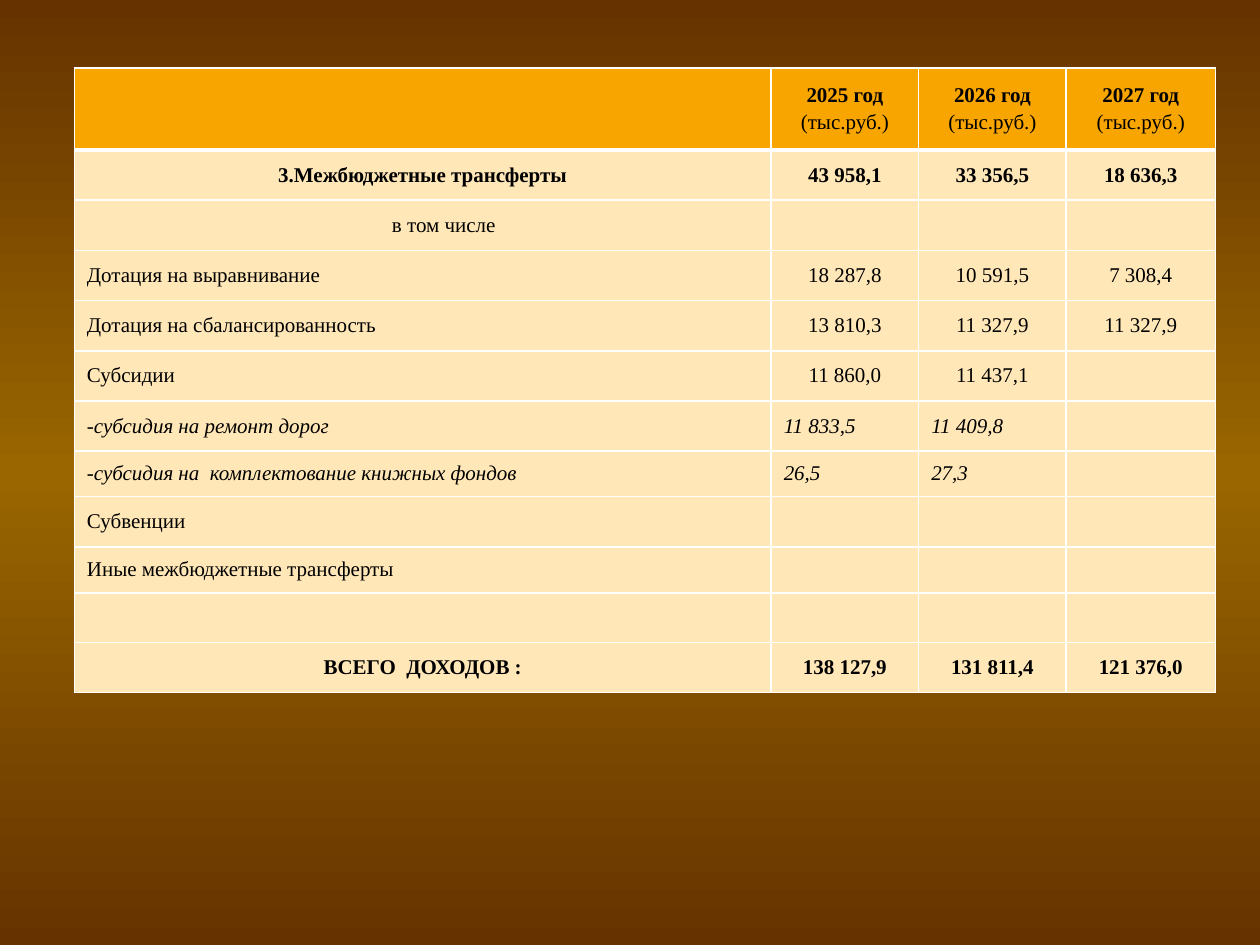
from copy import deepcopy

from lxml import etree
from pptx import Presentation, util as u
from pptx.dml.color import RGBColor
from pptx.enum import text
from pptx.oxml import ns

FONT, SIZE = "Times New Roman", 12
HEADER_FILL, BODY_FILL, WHITE, BLACK = "F8A500", "FFE7B8", "FFFFFF", "000000"
LEFT, CENTER, JUSTIFY = (text.PP_ALIGN.LEFT, text.PP_ALIGN.CENTER,
                         text.PP_ALIGN.JUSTIFY)
COLUMN_WIDTHS = [398.2, 84.3, 84.3, 85.3]
ROW_HEIGHTS = [46.8] + [28.7] * 6 + [26, 28.7, 26.3, 28.4, 28.7]
YEARS = ["2025 год", "2026 год", "2027 год"]
UNIT = "(тыс.руб.)"
BOLD, PLAIN, ITALIC = "bold", "plain", "italic"
INCOME_ROWS = [
    (BOLD, CENTER, "3.Межбюджетные трансферты", ["43 958,1", "33 356,5", "18 636,3"]),
    (PLAIN, CENTER, "в том числе", ["", "", ""]),
    (PLAIN, LEFT, "Дотация на выравнивание", ["18 287,8", "10 591,5", "7 308,4"]),
    (PLAIN, LEFT, "Дотация на сбалансированность", ["13 810,3", "11 327,9", "11 327,9"]),
    (PLAIN, LEFT, "Субсидии", ["11 860,0", "11 437,1", ""]),
    (ITALIC, LEFT, "-субсидия на ремонт дорог", ["11 833,5", "11 409,8", ""]),
    (ITALIC, LEFT, "-субсидия на  комплектование книжных фондов", ["26,5", "27,3", ""]),
    (PLAIN, JUSTIFY, "Субвенции", ["", "", ""]),
    (PLAIN, LEFT, "Иные межбюджетные трансферты", ["", "", ""]),
    (PLAIN, LEFT, "", ["", "", ""]),
    (BOLD, CENTER, "ВСЕГО  ДОХОДОВ :", ["138 127,9", "131 811,4", "121 376,0"]),
]


def color(value):
    """Return the colour for a hex string."""
    return RGBColor.from_string(value)


def paint_background(slide, edge, middle):
    """Fill the slide with a vertical gradient that peaks halfway."""
    fill = slide.background.fill
    fill.gradient()
    fill.gradient_angle = 90
    first = fill.gradient_stops[0]._gs
    first.addnext(deepcopy(first))
    for stop, position, value in zip(fill.gradient_stops, (0, 0.5, 1),
                                     (edge, middle, edge)):
        stop.position = position
        stop.color.rgb = color(value)


def add_border(cell, side, width):
    """Draw one white border of a cell."""
    properties = cell._tc.get_or_add_tcPr()
    line = etree.SubElement(properties, ns.qn(f"a:ln{side}"), w=str(u.Pt(width)))
    solid = etree.SubElement(line, ns.qn("a:solidFill"))
    etree.SubElement(solid, ns.qn("a:srgbClr"), val=WHITE)


def format_cell(cell, row_index):
    """Set the borders, fill and anchor of a cell."""
    widths = {"L": 1, "R": 1, "T": 3 if row_index == 1 else 1,
              "B": 3 if row_index == 0 else 1}
    for side, width in widths.items():
        add_border(cell, side, width)
    cell.fill.solid()
    cell.fill.fore_color.rgb = color(BODY_FILL if row_index else HEADER_FILL)
    cell.vertical_anchor = text.MSO_ANCHOR.MIDDLE


def write(paragraph, words, style, alignment):
    """Write one formatted run, or size the paragraph if it is empty."""
    paragraph.alignment = alignment
    if not words:
        paragraph._p.get_or_add_endParaRPr().set("sz", str(SIZE * 100))
        return
    run = paragraph.add_run()
    run.text = words
    run.font.name, run.font.size = FONT, u.Pt(SIZE)
    run.font.bold, run.font.italic = style == BOLD, style == ITALIC
    run.font.color.rgb = color(BLACK)


def fill_header(table):
    """Write the year headings with their unit."""
    write(table.cell(0, 0).text_frame.paragraphs[0], "", PLAIN, LEFT)
    for column, year in enumerate(YEARS, 1):
        frame = table.cell(0, column).text_frame
        write(frame.paragraphs[0], year, BOLD, CENTER)
        unit = frame.add_paragraph()
        write(unit, UNIT, PLAIN, CENTER)
        unit.space_before = u.Pt(2.4)


def fill_body(table):
    """Write the income rows."""
    for row, (style, alignment, label, amounts) in enumerate(INCOME_ROWS, 1):
        paragraph = table.cell(row, 0).text_frame.paragraphs[0]
        write(paragraph, label, style, alignment)
        if style == PLAIN and alignment == CENTER:
            paragraph._p.get_or_add_pPr().set("marL", str(u.Pt(24)))
        for column, amount in enumerate(amounts, 1):
            write(table.cell(row, column).text_frame.paragraphs[0], amount, style,
                  LEFT if style == ITALIC else CENTER)


def add_income_table(slide):
    """Add the table of transfers by year."""
    table = slide.shapes.add_table(
        len(ROW_HEIGHTS), len(COLUMN_WIDTHS), u.Pt(42.5), u.Pt(38.9),
        u.Pt(sum(COLUMN_WIDTHS)), u.Pt(sum(ROW_HEIGHTS))).table
    table.first_row = table.horz_banding = False
    for column, width in zip(table.columns, COLUMN_WIDTHS):
        column.width = u.Pt(width)
    for index, (row, height) in enumerate(zip(table.rows, ROW_HEIGHTS)):
        row.height = u.Pt(height)
        for cell in row.cells:
            format_cell(cell, index)
    fill_header(table)
    fill_body(table)


def main():
    """Build and save the slide."""
    presentation = Presentation()
    presentation.slide_width, presentation.slide_height = u.Pt(720), u.Pt(540)
    slide = presentation.slides.add_slide(presentation.slide_layouts[6])
    paint_background(slide, "663300", "996600")
    add_income_table(slide)
    presentation.save("out.pptx")


if __name__ == "__main__":
    main()
